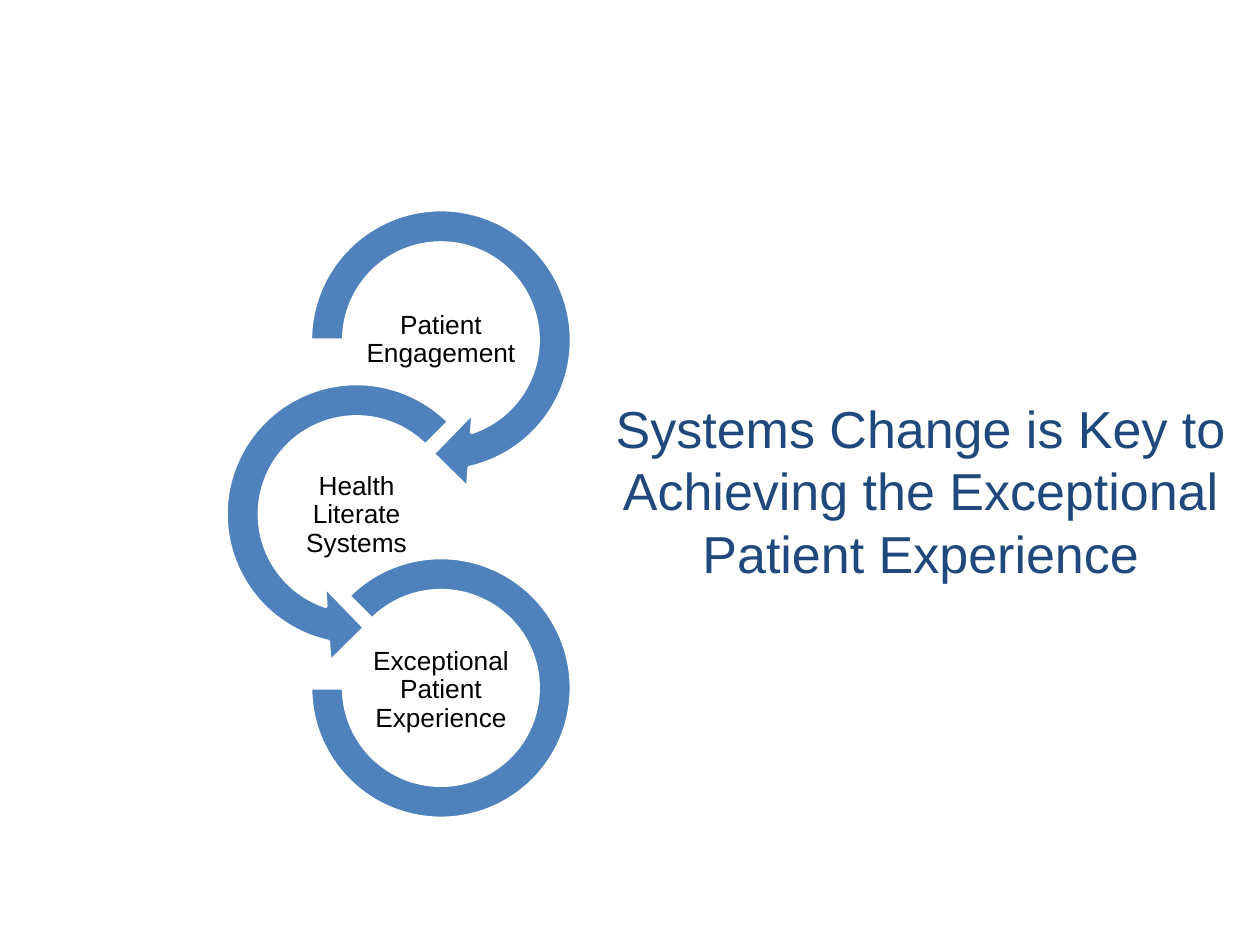
from pptx import Presentation
from pptx.dml.color import RGBColor
from pptx.enum.shapes import MSO_SHAPE
from pptx.enum.text import MSO_ANCHOR, PP_ALIGN
from pptx.util import Inches, Pt

RIGHT = MSO_SHAPE.CIRCULAR_ARROW
LEFT = MSO_SHAPE.LEFT_CIRCULAR_ARROW
ARC = MSO_SHAPE.BLOCK_ARC
MIDDLE, BOTTOM = MSO_ANCHOR.MIDDLE, MSO_ANCHOR.BOTTOM
CENTER = PP_ALIGN.CENTER

# Grid of the chain: centres of two columns, first row and row pitches
COLS = (2.83, 3.5)
TOP = 2.7
RING_GAP, LABEL_GAP = 1.38, 1.39

# Label, column, shape, size, adjustments
STEPS = (
    ("Patient Engagement", 1, RIGHT, 2.41, (0.11, 11.42, 45, 108, 0.125)),
    ("Health Literate Systems", 0, LEFT, 2.41, (0.11, 11.42, 63, 189, 0.125)),
    ("Exceptional Patient Experience", 1, ARC, 2.07, (135, 108, 0.127)),
)


def color(hex_code):
    return RGBColor.from_string(hex_code)


def box(x, y, w, h):
    """Frame in inches around a centre point."""
    return [Inches(v) for v in (x - w / 2, y - h / 2, w, h)]


def add_ring(slide, kind, x, y, size, adjust):
    ring = slide.shapes.add_shape(kind, *box(x, y, size, size))
    ring.shadow.inherit = False
    for i, value in enumerate(adjust):
        ring.adjustments[i] = value
    ring.fill.solid()
    ring.fill.fore_color.rgb = color("4F81BD")
    ring.line.color.rgb = color("FFFFFF")
    ring.line.width = Pt(2)


def add_text(slide, text, frame, size=15, fill="000000", anchor=MIDDLE,
             inset=None, spacing=1.0):
    area = slide.shapes.add_textbox(*frame).text_frame
    area.word_wrap = True
    area.vertical_anchor = anchor
    if inset is not None:
        area.margin_left = area.margin_right = Inches(inset)
        area.margin_top = area.margin_bottom = Inches(inset)
    para = area.paragraphs[0]
    para.text = text
    para.alignment = CENTER
    para.line_spacing = spacing
    para.font.name = "Arial"
    para.font.size = Pt(size)
    para.font.color.rgb = color(fill)


def main():
    deck = Presentation()
    deck.slide_width, deck.slide_height = Inches(10), Inches(7.5)
    slide = deck.slides.add_slide(deck.slide_layouts[6])

    # Statement on the right
    add_text(slide, "Systems Change is Key to Achieving the Exceptional "
             "Patient Experience", box(7.31, 3.49, 5.12, 2.38),
             size=29.7, fill="1F497D", anchor=BOTTOM)

    # Chain of linked rings with labels
    for row, (label, col, kind, size, adjust) in enumerate(STEPS):
        x = COLS[col]
        add_ring(slide, kind, x, TOP + row * RING_GAP, size, adjust)
        add_text(slide, label, box(x, TOP + row * LABEL_GAP, 1.34, 0.67),
                 inset=0.01, spacing=0.9)

    deck.save("out.pptx")


if __name__ == "__main__":
    main()
